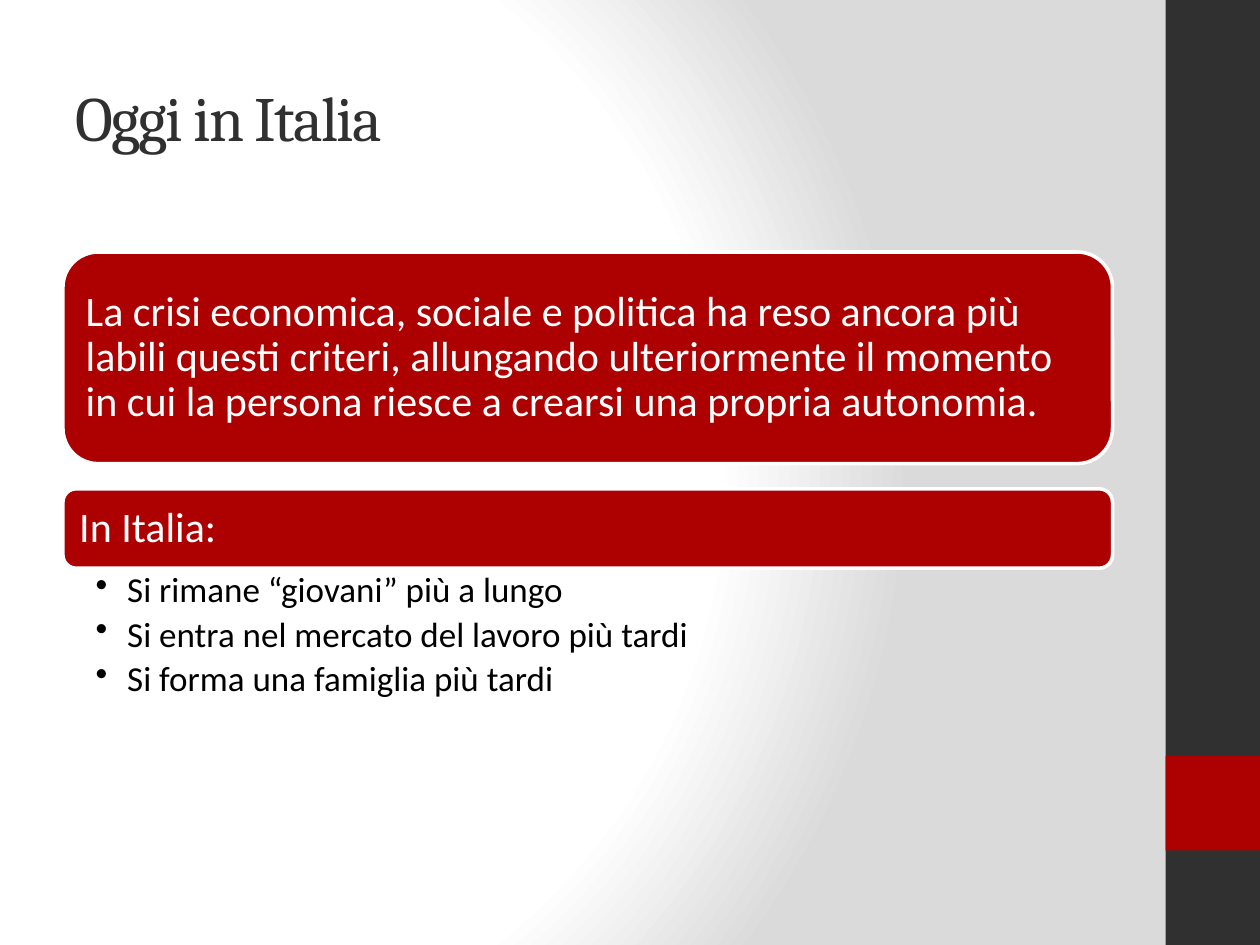
from pptx import Presentation
from pptx.dml.color import RGBColor
from pptx.enum.shapes import MSO_SHAPE
from pptx.enum.text import MSO_ANCHOR, PP_ALIGN
from pptx.oxml import parse_xml
from pptx.oxml.ns import nsdecls
from pptx.util import Inches, Pt

CHARCOAL = RGBColor(0x30, 0x30, 0x30)
RED = RGBColor(0xAD, 0x01, 0x01)
WHITE = RGBColor(0xFF, 0xFF, 0xFF)
BLACK = RGBColor(0x00, 0x00, 0x00)
GREY = RGBColor(0xDA, 0xDA, 0xDA)

deck = Presentation()
deck.slide_width = Inches(10)
deck.slide_height = Inches(7.5)
COLUMN = deck.slide_width / 40
ROW = deck.slide_height / 30
LEFT = 2
CONTENT_WIDTH = 33.32
page = deck.slides.add_slide(deck.slide_layouts[6])


def place(column, row, columns, rows):
    return [round(length) for length in (column * COLUMN, row * ROW, columns * COLUMN, rows * ROW)]


def add_panel(preset, area, fill):
    panel = page.shapes.add_shape(preset, *place(*area))
    panel.shadow.inherit = False
    panel.fill.solid()
    panel.fill.fore_color.rgb = fill
    panel.line.fill.background()
    return panel


stops = "".join(
    f'<a:gs pos="{share * 1000}"><a:srgbClr val="{color}"/></a:gs>'
    for share, color in ((0, WHITE), (75, WHITE), (100, GREY))
)
page.element.cSld.insert(0, parse_xml(
    f'<p:bg {nsdecls("p", "a")}><p:bgPr><a:gradFill rotWithShape="1"><a:gsLst>{stops}</a:gsLst>'
    '<a:path path="circle"><a:fillToRect l="20000" t="50000" r="100000" b="50000"/></a:path>'
    '</a:gradFill><a:effectLst/></p:bgPr></p:bg>'
))

for row, rows, color in ((0, 30, CHARCOAL), (24, 3, RED)):
    add_panel(MSO_SHAPE.RECTANGLE, (37, row, 3, rows), color)

title = page.shapes.add_textbox(*place(LEFT, 1.2, CONTENT_WIDTH, 5))
title.text_frame.word_wrap = True
title.text_frame.vertical_anchor = MSO_ANCHOR.MIDDLE
title.text_frame.text = "Oggi in Italia"
span = title.text_frame.paragraphs[0].runs[0]
span.font.name = "Cambria"
span.font.size = Pt(36)
span.font.color.rgb = CHARCOAL
span.font._element.set("spc", "-100")

statements = (
    (8, 6.72, "La crisi economica, sociale e politica ha reso ancora più labili questi criteri, "
              "allungando ulteriormente il momento in cui la persona riesce a crearsi una propria autonomia."),
    (15.52, 2.52, "In Italia:"),
)
for row, rows, text in statements:
    panel = add_panel(MSO_SHAPE.ROUNDED_RECTANGLE, (LEFT, row, CONTENT_WIDTH, rows), RED)
    panel.line.color.rgb = WHITE
    panel.line.width = Pt(2)
    frame = panel.text_frame
    frame.word_wrap = True
    frame.vertical_anchor = MSO_ANCHOR.MIDDLE
    frame.margin_left = frame.margin_right = frame.margin_top = frame.margin_bottom = Inches(0.1)
    frame.text = text
    para = frame.paragraphs[0]
    para.alignment = PP_ALIGN.LEFT
    para.line_spacing = 0.9
    para.font.name = "Calibri"
    para.runs[0].font.name = "Calibri"
    para.runs[0].font.size = Pt(24)
    para.runs[0].font.color.rgb = WHITE

points = page.shapes.add_textbox(*place(LEFT, 18.04, CONTENT_WIDTH, 6.04))
frame = points.text_frame
frame.word_wrap = True
frame.margin_left = Inches(0.26)
frame.margin_right = Inches(0.16)
frame.margin_top = frame.margin_bottom = Inches(0.03)
frame.text = "\n".join((
    "Si rimane “giovani” più a lungo",
    "Si entra nel mercato del lavoro più tardi",
    "Si forma una famiglia più tardi",
))
for para in frame.paragraphs:
    para.line_spacing = 0.9
    para.space_after = Pt(4)
    properties = para._p.get_or_add_pPr()
    properties.set("marL", str(Inches(0.25)))
    properties.set("indent", str(Inches(-0.25)))
    properties.append(parse_xml(f'<a:buChar {nsdecls("a")} char="•"/>'))
    span = para.runs[0]
    span.font.name = "Calibri"
    span.font.size = Pt(20)
    span.font.color.rgb = BLACK

deck.save("out.pptx")
